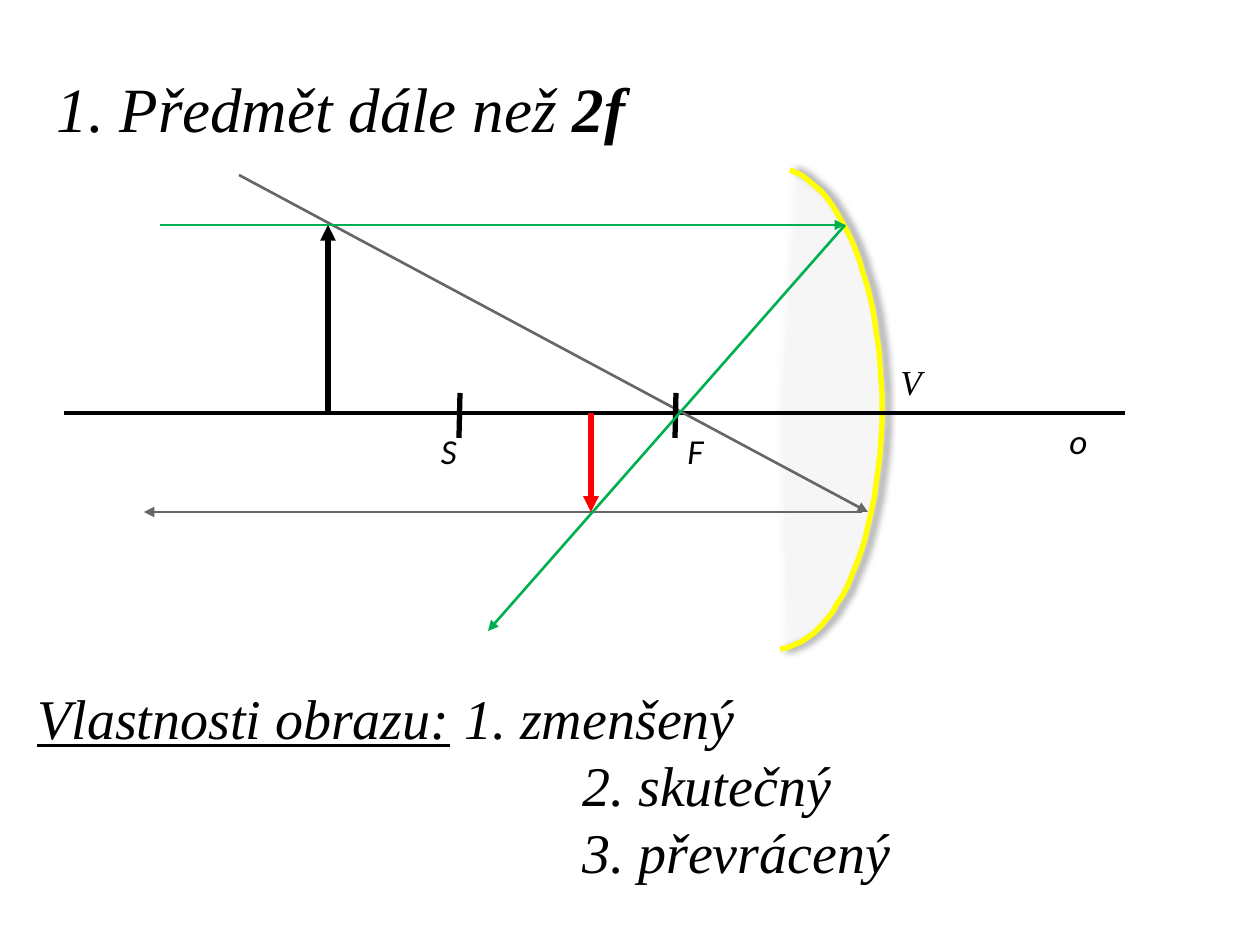
from dataclasses import dataclass

from lxml import etree
from pptx import Presentation
from pptx import util as u
from pptx.dml.color import RGBColor
from pptx.enum import shapes, text
from pptx.oxml import parse_xml
from pptx.oxml.ns import nsdecls, qn

PX = u.Inches(1) / 126


@dataclass(frozen=True)
class Theme:
    black: RGBColor = RGBColor(0x00, 0x00, 0x00)
    white: RGBColor = RGBColor(0xFF, 0xFF, 0xFF)
    mirror: RGBColor = RGBColor(0xFF, 0xFF, 0x00)
    focal_ray: RGBColor = RGBColor(0x66, 0x66, 0x66)
    parallel_ray: RGBColor = RGBColor(0x00, 0xB0, 0x50)
    image: RGBColor = RGBColor(0xFF, 0x00, 0x00)
    serif: str = "Times New Roman"
    sans: str = "Calibri"
    title_size: int = 36
    body_size: int = 32
    label_size: int = 20


theme = Theme()


def place(shape, *box):
    """Set left, top, width and height, given in px."""
    shape.left, shape.top, shape.width, shape.height = (round(n * PX) for n in box)


def format_runs(paragraph, font_name, size):
    for run in paragraph.runs:
        run.font.name = font_name
        run.font.size = u.Pt(size)
        run.font.italic = True
        run.font.color.rgb = theme.black


presentation = Presentation()
presentation.slide_width = round(1260 * PX)
presentation.slide_height = round(945 * PX)
slide = presentation.slides.add_slide(presentation.slide_layouts[5])

# Title
title = slide.shapes.title
place(title, 44, 49, 1186, 116)
title.text_frame.vertical_anchor = text.MSO_ANCHOR.MIDDLE
paragraph = title.text_frame.paragraphs[0]
paragraph.alignment = text.PP_ALIGN.LEFT
paragraph.add_run().text = "1. Předmět dále než "
focal_length = paragraph.add_run()
focal_length.text = "2f"
focal_length.font.bold = True
format_runs(paragraph, theme.serif, theme.title_size)

# Concave mirror: points along two Bézier curves that meet at the vertex
curves = [
    [(790, 170), (843, 188), (882, 289), (882, 408)],
    [(882, 408), (882, 537), (837, 643), (780, 649)],
]
STEPS = 24
arc_points = [curves[0][0]]
for a, b, c, d in curves:
    for step in range(1, STEPS + 1):
        t = step / STEPS
        arc_points.append(tuple(
            (1 - t) ** 3 * a[axis] + 3 * (1 - t) ** 2 * t * b[axis]
            + 3 * (1 - t) * t ** 2 * c[axis] + t ** 3 * d[axis]
            for axis in (0, 1)))

for points, closed in [(arc_points + [(774, 408)], True), (arc_points, False)]:
    builder = slide.shapes.build_freeform(*points[0], scale=PX)
    builder.add_line_segments(points[1:], close=closed)
    mirror = builder.convert_to_shape()
    if closed:
        mirror.fill.solid()
        mirror.fill.fore_color.rgb = theme.white
        color = mirror.fill._xPr.find(qn("a:solidFill"))[0]
        etree.SubElement(color, qn("a:alpha")).set("val", "10000")
        mirror.line.fill.background()
    else:
        mirror.fill.background()
        mirror.line.color.rgb = theme.mirror
        mirror.line.width = u.Pt(3)
    mirror._element.spPr.append(parse_xml(
        f'<a:effectLst {nsdecls("a")}>'
        f'<a:outerShdw blurRad="{u.Pt(4)}" dist="{u.Pt(3)}" dir="0">'
        f'<a:srgbClr val="{theme.black}"><a:alpha val="40000"/></a:srgbClr>'
        '</a:outerShdw></a:effectLst>'))

# Axis, rays, marks, object and image: start, end, colour, width, arrowhead
lines = [
    ((64, 413), (1125, 413), theme.black, 2.25, False),
    ((862, 512), (144, 512), theme.focal_ray, 1.5, True),
    ((239, 175), (868, 512), theme.focal_ray, 1.5, True),
    ((676, 393), (675, 438), theme.black, 3, False),
    ((460, 393), (459, 438), theme.black, 3, False),
    ((328, 413), (328, 225), theme.black, 3, True),
    ((160, 225), (845, 225), theme.parallel_ray, 1.5, True),
    ((845, 225), (488, 631), theme.parallel_ray, 1.5, True),
    ((591, 413), (591, 512), theme.image, 3, True),
]
for start, end, color, width, has_arrow in lines:
    connector = slide.shapes.add_connector(
        shapes.MSO_CONNECTOR.STRAIGHT, *(round(n * PX) for n in start + end))
    connector.line.color.rgb = color
    connector.line.width = u.Pt(width)
    if has_arrow:
        etree.SubElement(connector.line._get_or_add_ln(), qn("a:tailEnd")).set("type", "triangle")
    etree.SubElement(connector._element.spPr, qn("a:effectLst"))

# Point and axis labels
left, right = text.PP_ALIGN.LEFT, text.PP_ALIGN.RIGHT
labels = [
    ("o", (1057, 413, 43, 55), theme.sans, left),
    ("F", (675, 423, 29, 55), theme.sans, left),
    ("S", (420, 423, 49, 55), theme.sans, right),
    ("V", (888, 354, 59, 55), theme.serif, left),
]
for name, box, font_name, alignment in labels:
    label = slide.shapes.add_textbox(0, 0, 0, 0)
    place(label, *box)
    label.text_frame.word_wrap = name != "o"
    label.text_frame.text = name
    paragraph = label.text_frame.paragraphs[0]
    paragraph.alignment = alignment
    format_runs(paragraph, font_name, theme.label_size)

# Properties of the image
properties = slide.shapes.add_textbox(0, 0, 0, 0)
place(properties, 25, 670, 942, 228)
frame = properties.text_frame
frame.word_wrap = True
frame.vertical_anchor = text.MSO_ANCHOR.MIDDLE
heading = frame.paragraphs[0].add_run()
heading.text = "Vlastnosti obrazu:"
heading.font.underline = True
frame.paragraphs[0].add_run().text = " 1. zmenšený"
for item in ("2. skutečný", "3. převrácený"):
    paragraph = frame.add_paragraph()
    paragraph.text = item
    paragraph._p.get_or_add_pPr().set("marL", str(round(545 * PX)))
for paragraph in frame.paragraphs:
    format_runs(paragraph, theme.serif, theme.body_size)

presentation.save("out.pptx")
